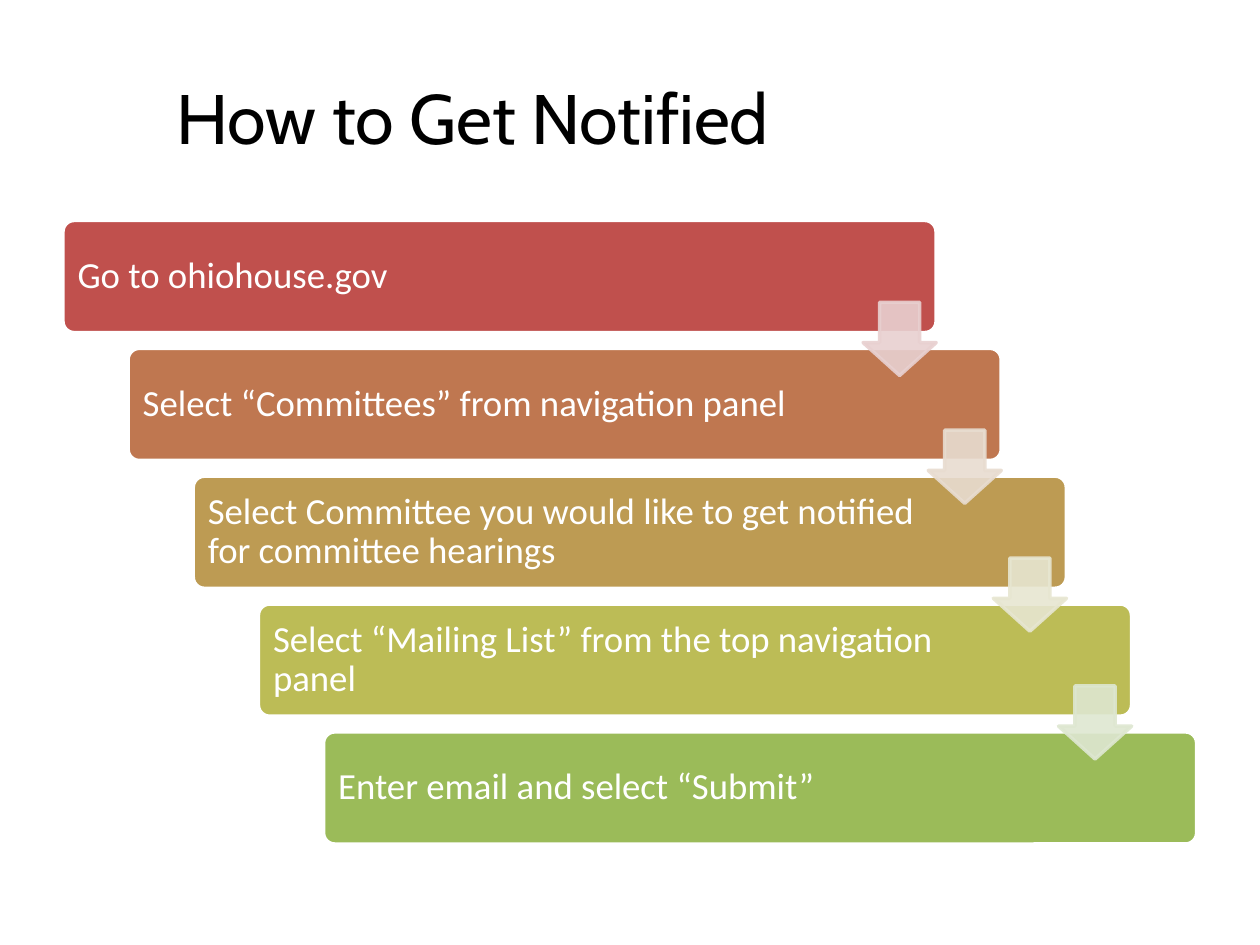
import pptx
import pptx.dml.color
import pptx.enum.shapes
import pptx.enum.text
import pptx.oxml.ns
import pptx.util
from lxml import etree

RGBColor = pptx.dml.color.RGBColor
MSO_SHAPE = pptx.enum.shapes.MSO_SHAPE
PP_ALIGN = pptx.enum.text.PP_ALIGN

BLACK = RGBColor(0x00, 0x00, 0x00)
WHITE = RGBColor(0xFF, 0xFF, 0xFF)
RED = RGBColor(0xC0, 0x50, 0x4D)
RUST = RGBColor(0xBF, 0x77, 0x50)
OCHRE = RGBColor(0xBD, 0x9B, 0x53)
OLIVE = RGBColor(0xBC, 0xBC, 0x56)
GREEN = RGBColor(0x9B, 0xBB, 0x59)
PALE_RED = RGBColor(0xE8, 0xD0, 0xD0)
PALE_RUST = RGBColor(0xE8, 0xDC, 0xD0)
PALE_OCHRE = RGBColor(0xE7, 0xE6, 0xD1)
PALE_GREEN = RGBColor(0xDE, 0xE7, 0xD1)

STEPS = [
    ("Go to ohiohouse.gov", RED),
    ("Select “Committees” from navigation panel", RUST),
    ("Select Committee you would like to get notified for committee hearings", OCHRE),
    ("Select “Mailing List” from the top navigation panel", OLIVE),
    ("Enter email and select “Submit”", GREEN),
]
ARROWS = [PALE_RED, PALE_RUST, PALE_OCHRE, PALE_GREEN]

STEP_RIGHT, STEP_DOWN = 5.17, 13.53


class Staircase:
    title_font = {"name": "Cabin", "size": pptx.util.Pt(40)}
    step_font = {"name": "Calibri", "size": pptx.util.Pt(21)}
    step_frame = {
        "word_wrap": True,
        "vertical_anchor": pptx.enum.text.MSO_ANCHOR.MIDDLE,
        "margin_left": pptx.util.Inches(0.09),
        "margin_top": pptx.util.Inches(0.09),
        "margin_right": pptx.util.Inches(1.18),
        "margin_bottom": pptx.util.Inches(0.09),
    }

    def __init__(self, deck):
        self.deck = deck
        self.page = deck.slides.add_slide(deck.slide_layouts[5])

    def area(self, left, top, width, height):
        across, down = self.deck.slide_width / 100, self.deck.slide_height / 100
        return {
            "left": round(left * across),
            "top": round(top * down),
            "width": round(width * across),
            "height": round(height * down),
        }

    def apply(self, target, values):
        for name, value in values.items():
            setattr(target, name, value)

    def add_text(self, box, text, font, color, align):
        para = box.text_frame.paragraphs[0]
        para.alignment = align
        span = para.add_run()
        span.text = text
        self.apply(span.font, font)
        span.font.color.rgb = color
        return para

    def title(self, text, *place):
        box = self.page.shapes.title
        self.apply(box, self.area(*place))
        box.text_frame.vertical_anchor = pptx.enum.text.MSO_ANCHOR.MIDDLE
        self.add_text(box, text, self.title_font, BLACK, PP_ALIGN.CENTER)

    def shape(self, kind, place, adjustments, fill, line):
        box = self.page.shapes.add_shape(kind, **self.area(*place))
        for index, value in enumerate(adjustments):
            box.adjustments[index] = value
        box.shadow.inherit = False
        box.fill.solid()
        box.fill.fore_color.rgb = fill
        box.line.color.rgb = line
        box.line.width = pptx.util.Pt(2)
        return box

    def step(self, index, text, color):
        place = (5 + STEP_RIGHT * index, 23.33 + STEP_DOWN * index, 69.3, 11.87)
        box = self.shape(MSO_SHAPE.ROUNDED_RECTANGLE, place, [0.1], color, WHITE)
        self.apply(box.text_frame, self.step_frame)
        para = self.add_text(box, text, self.step_font, WHITE, PP_ALIGN.LEFT)
        para.line_spacing = 0.9

    def arrow(self, index, color):
        place = (68.5 + STEP_RIGHT * index, 32 + STEP_DOWN * index, 5.8, 7.73)
        box = self.shape(MSO_SHAPE.DOWN_ARROW, place, [0.55, 0.45], color, color)
        qn = pptx.oxml.ns.qn
        for tint in box.element.spPr.iter(qn("a:srgbClr")):
            etree.SubElement(tint, qn("a:alpha")).set("val", "90000")


def main():
    deck = pptx.Presentation()
    deck.slide_width = pptx.util.Inches(10)
    deck.slide_height = pptx.util.Inches(7.5)
    stairs = Staircase(deck)
    stairs.title("How to Get Notified", 5, 4, 65, 16.67)
    for index, (text, color) in enumerate(STEPS):
        stairs.step(index, text, color)
    for index, color in enumerate(ARROWS):
        stairs.arrow(index, color)
    deck.save("out.pptx")


if __name__ == "__main__":
    main()
